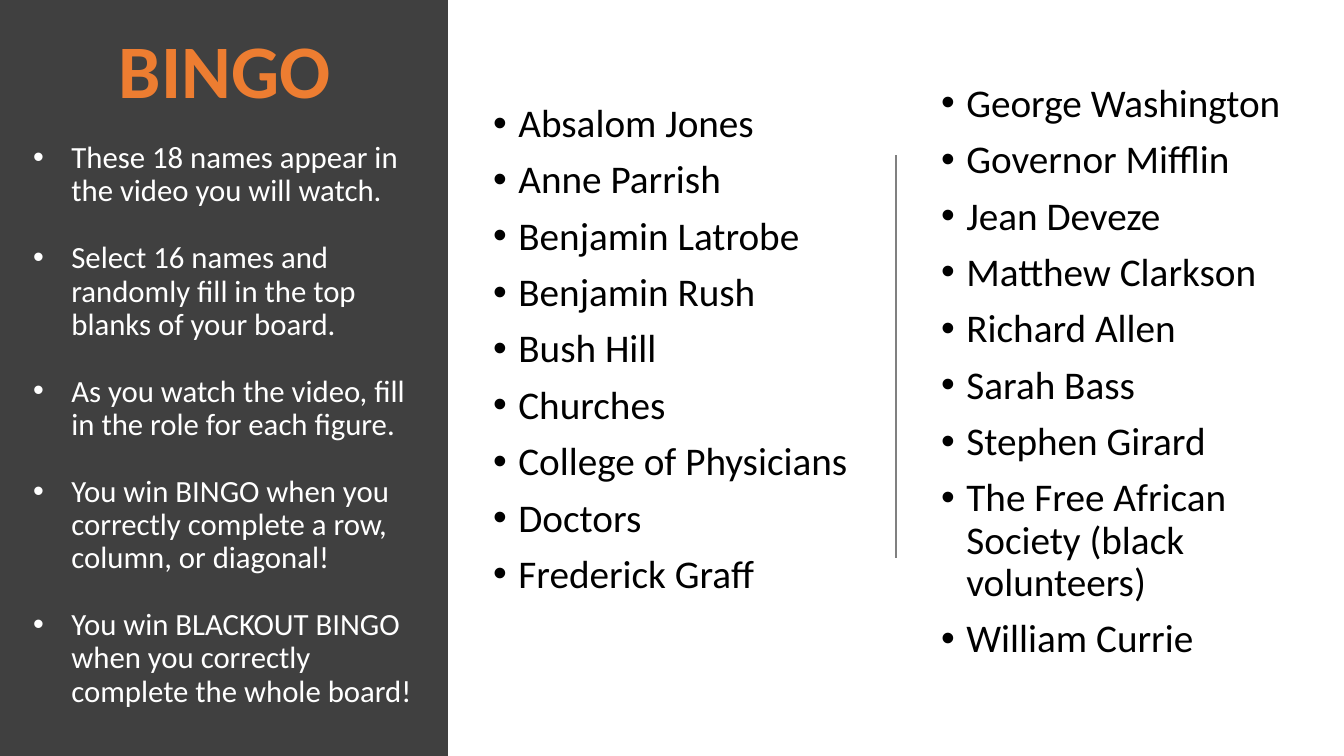
from lxml import etree
from pptx import Presentation, util as u
from pptx.dml.color import RGBColor
from pptx.enum import shapes, text
from pptx.oxml.ns import qn

WIDE, HIGH = 13.33, 7.5
COL = WIDE / 3
INSET = 0.35

RULES = [
    "These 18 names appear in the video you will watch.",
    "Select 16 names and randomly fill in the top blanks of your board.",
    "As you watch the video, fill in the role for each figure.",
    "You win BINGO when you correctly complete a row, column, or diagonal!",
    "You win BLACKOUT BINGO when you correctly complete the whole board!",
]
NAMES = [
    ["Absalom Jones", "Anne Parrish", "Benjamin Latrobe", "Benjamin Rush",
     "Bush Hill", "Churches", "College of Physicians", "Doctors",
     "Frederick Graff"],
    ["George Washington", "Governor Mifflin", "Jean Deveze",
     "Matthew Clarkson", "Richard Allen", "Sarah Bass", "Stephen Girard",
     "The Free African Society (black volunteers)", "William Currie"],
]
TITLE = {"size": u.Pt(54), "bold": True}
RULE = {"size": u.Pt(22)}
NAME = {"size": u.Pt(28)}


def color(code):
    return RGBColor.from_string(code)


def style(para, font, code):
    for key, val in {"name": "Calibri", **font}.items():
        setattr(para.font, key, val)
    para.font.color.rgb = color(code)


def bullet(para, hang):
    """Give the paragraph a round bullet with a hanging indent."""
    props = para._p.get_or_add_pPr()
    props.set("marL", str(u.Inches(hang)))
    props.set("indent", str(-u.Inches(hang)))
    face = etree.SubElement(props, qn("a:buFont"))
    face.set("typeface", "Arial")
    mark = etree.SubElement(props, qn("a:buChar"))
    mark.set("char", "•")


def frame(slide, left, top, width, height):
    box = slide.shapes.add_textbox(*map(u.Inches, (left, top, width, height)))
    box.text_frame.word_wrap = True
    return box.text_frame


def panel(slide):
    rect = slide.shapes.add_shape(
        shapes.MSO_SHAPE.RECTANGLE, 0, 0, u.Inches(COL), u.Inches(HIGH))
    rect.shadow.inherit = False
    rect.fill.solid()
    rect.fill.fore_color.rgb = color("404040")
    rect.line.fill.background()


def title(slide, words, *area):
    body = frame(slide, *area)
    body.auto_size = text.MSO_AUTO_SIZE.SHAPE_TO_FIT_TEXT
    para = body.paragraphs[0]
    para.text = words
    para.alignment = text.PP_ALIGN.CENTER
    style(para, TITLE, "ED7D31")


def points(slide, items, area, font, code, hang, gap):
    body = frame(slide, *area)
    for i, item in enumerate(items):
        para = body.add_paragraph() if i else body.paragraphs[0]
        para.text = item
        para.line_spacing = 0.9
        para.space_before = u.Pt(gap if i else 0)
        bullet(para, hang)
        style(para, font, code)


def divide(slide, x, top, end):
    line = slide.shapes.add_connector(
        shapes.MSO_CONNECTOR.STRAIGHT, *map(u.Inches, (x, top, x, end)))
    line.line.color.rgb = color("808080")
    line.line.width = u.Pt(1)
    etree.SubElement(line._element.spPr, qn("a:effectLst"))


def main():
    deck = Presentation()
    deck.slide_width, deck.slide_height = u.Inches(WIDE), u.Inches(HIGH)
    slide = deck.slides.add_slide(deck.slide_layouts[6])

    panel(slide)
    title(slide, "BINGO", 0.5, 0.18, 3.46, 1.01)
    points(slide, RULES, (0.23, 1.36, 3.98, 5.91), RULE, "FFFFFF", 0.38, 24)

    spans = [(0.98, 5.9), (0.78, 6.49)]
    for i, (names, (top, height)) in enumerate(zip(NAMES, spans), 1):
        area = (i * COL + INSET, top, 3.75, height)
        points(slide, names, area, NAME, "000000", 0.25, 10)
    divide(slide, 2 * COL, 1.54, 5.54)

    deck.save("out.pptx")


if __name__ == "__main__":
    main()
